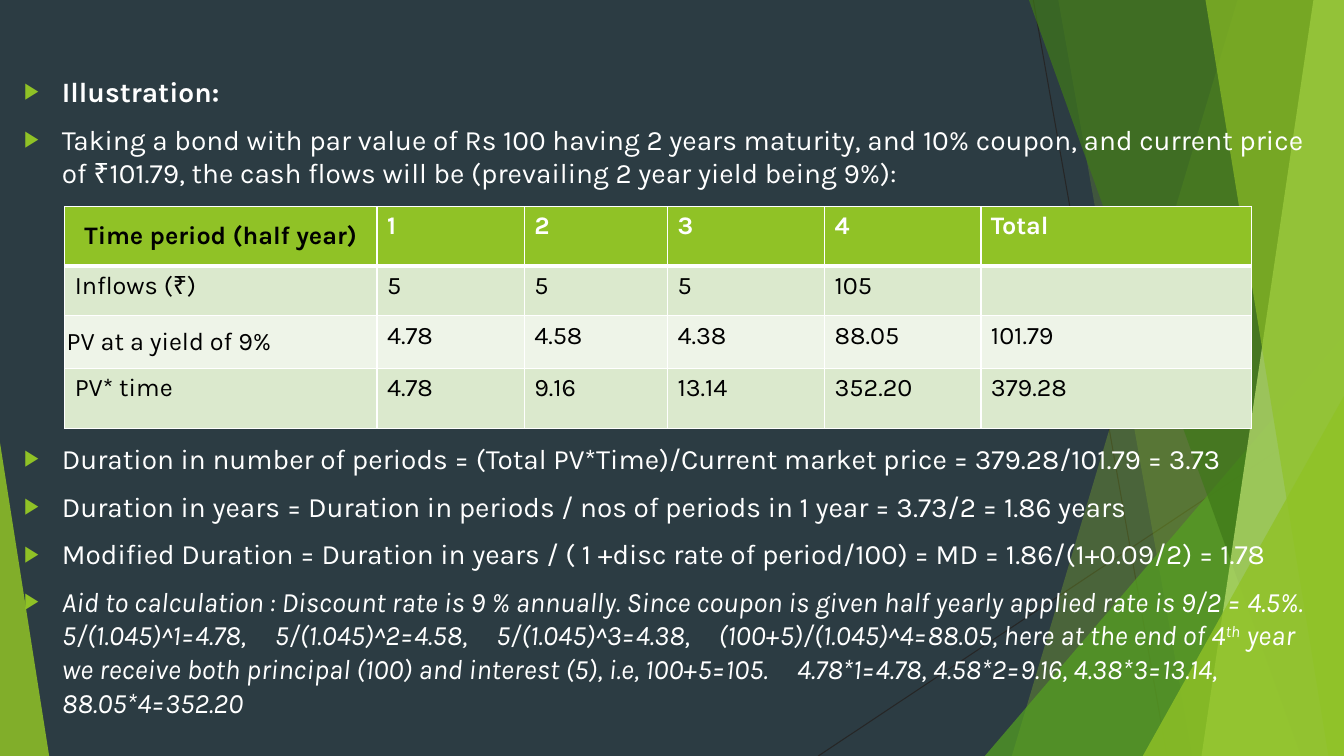
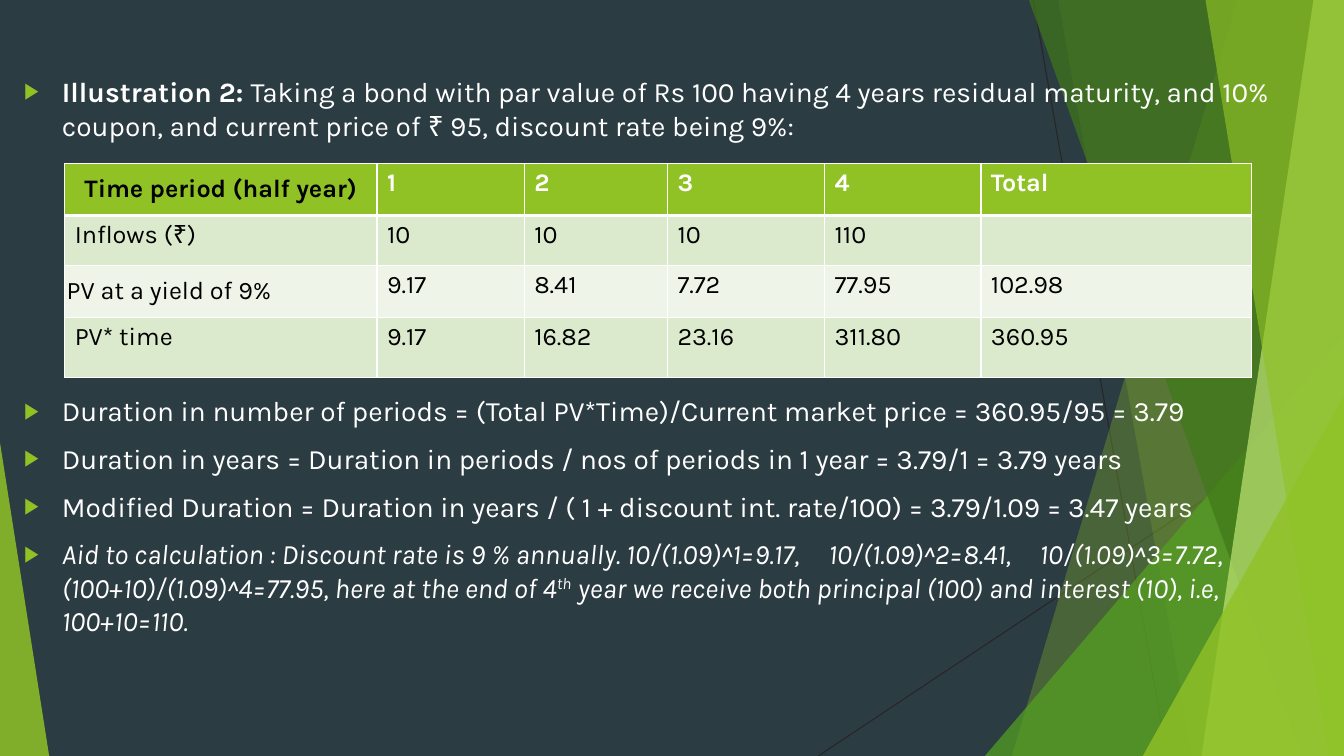
import pptx
import pptx.util
import pptx.dml.color
import pptx.enum.shapes
import pptx.enum.text
import pptx.oxml
import pptx.oxml.ns
import lxml.etree

Cm, Pt = pptx.util.Cm, pptx.util.Pt
RGB = pptx.dml.color.RGBColor
qn = pptx.oxml.ns.qn

# Shared look
WIDTH, HEIGHT = 33.87, 19.05
FONT = "Karla"
NIGHT = RGB(0x2C, 0x3C, 0x43)
LIME = RGB(0x90, 0xC2, 0x26)
LEAF = RGB(0x54, 0xA0, 0x21)
FOREST = RGB(0x3F, 0x78, 0x19)
PALE_LIME = RGB(0xC0, 0xE4, 0x74)
ROW_DARK = RGB(0xDB, 0xE9, 0xCD)
ROW_LIGHT = RGB(0xEE, 0xF4, 0xE8)
CHARCOAL = RGB(0x26, 0x26, 0x26)
WHITE = RGB(0xFF, 0xFF, 0xFF)
BLACK = RGB(0, 0, 0)

# Background: x1, y1, x2, y2 of the thin lines
RAYS = [(26.04, 0, 29.41, HEIGHT), (WIDTH, 10.24, 20.62, HEIGHT)]
# Bands reach the right edge: x at the top, x at the bottom, colour, opacity
# Wedges stand on the lower edge: left, top, width, apex, colour, opacity
FACETS = [
    ("band", (31.19, 25.5), LIME, 30),
    ("band", (26.67, 30.05), LIME, 20),
    ("wedge", (24.82, 8.46, 9.05, 1), LEAF, 72),
    ("band", (25.93, 32.79), FOREST, 70),
    ("band", (33.1, 30.28), PALE_LIME, 70),
    ("band", (30.38, 33.48), LIME, 65),
    ("wedge", (28.8, 9.98, 5.07, 1), LIME, 80),
    ("wedge", (0, 11.15, 1.24, 0), LIME, 85),
]

# Text runs: wording, font format, further run attributes
PLAIN, BOLD, ITALIC = {}, {"bold": True}, {"italic": True}
GAP = (" ", ITALIC, {"spc": "1600"})
TH = ("th", ITALIC, {"baseline": "30000"})


def plain(text):
    return [(text, PLAIN, {})]


def aid(*parts):
    """Italic runs; parts that are already runs pass through."""
    return [(part, ITALIC, {}) if isinstance(part, str) else part for part in parts]


PERIODS = ["Time period (half year)", "1", "2", "3", "4", "Total"]
COLUMNS = [7.87, 3.71, 3.61, 3.96, 3.94, 6.81]
TABLE_LEFT = 1.63
BODY_LEFT, BODY_TOP, BODY_WIDTH = 0.36, 1.75, 33.1

ILLUSTRATIONS = [
    {
        "intro": [
            [("Illustration:", BOLD, {})],
            plain("Taking a bond with par value of Rs 100 having 2 years maturity, and 10% coupon, "
                  "and current price of ₹101.79, the cash flows will be (prevailing 2 year yield being 9%):"),
        ],
        "table_top": 5.21,
        "rows": [1.5, 1.25, 1.32, 1.52],
        "cash_flows": [
            PERIODS,
            ["Inflows (₹)", "5", "5", "5", "105", ""],
            ["PV at a yield of 9%", "4.78", "4.58", "4.38", "88.05", "101.79"],
            ["PV* time", "4.78", "9.16", "13.14", "352.20", "379.28"],
        ],
        "workings_top": 11,
        "workings": [
            plain("Duration in number of periods = (Total PV*Time)/Current market price = 379.28/101.79 = 3.73"),
            plain("Duration in years = Duration in periods / nos of periods in 1 year = 3.73/2 = 1.86 years"),
            plain("Modified Duration = Duration in years / ( 1 +disc rate of period/100) = MD = "
                  "1.86/(1+0.09/2) = 1.78"),
            aid("Aid to calculation : Discount rate is 9 % annually. Since coupon is given half yearly "
                "applied rate is 9/2 = 4.5%.", GAP, "5/(1.045)^1=4.78,", GAP, "5/(1.045)^2=4.58,", GAP,
                "5/(1.045)^3=4.38,", GAP, "(100+5)/(1.045)^4=88.05, here at the end of 4", TH,
                " year we receive both principal (100) and interest (5), i.e, 100+5=105.", GAP,
                "4.78*1=4.78, 4.58*2=9.16, 4.38*3=13.14, 88.05*4=352.20"),
        ],
    },
    {
        "intro": [
            [("Illustration 2: ", BOLD, {})]
            + plain("Taking a bond with par value of Rs 100 having 4 years residual maturity, and 10% coupon, "
                    "and current price of ₹ 95, discount rate being 9%:"),
        ],
        "table_top": 4.11,
        "rows": [1.32, 1.25, 1.32, 1.52],
        "cash_flows": [
            PERIODS,
            ["Inflows (₹)", "10", "10", "10", "110", ""],
            ["PV at a yield of 9%", "9.17", "8.41", "7.72", "77.95", "102.98"],
            ["PV* time", "9.17", "16.82", "23.16", "311.80", "360.95"],
        ],
        "workings_top": 9.8,
        "workings": [
            plain("Duration in number of periods = (Total PV*Time)/Current market price = 360.95/95 = 3.79"),
            plain("Duration in years = Duration in periods / nos of periods in 1 year = 3.79/1 = 3.79 years"),
            plain("Modified Duration = Duration in years / ( 1 + discount int. rate/100) = 3.79/1.09 = 3.47 years"),
            aid("Aid to calculation : Discount rate is 9 % annually. 10/(1.09)^1=9.17,", GAP,
                "10/(1.09)^2=8.41,", GAP, "10/(1.09)^3=7.72,", GAP,
                "(100+10)/(1.09)^4=77.95, here at the end of 4", TH,
                " year we receive both principal (100) and interest (10), i.e, 100+10=110."),
        ],
    },
]


def apply(target, values):
    for name, value in values.items():
        setattr(target, name, value)


def add_child(parent, tag, **attributes):
    child = lxml.etree.SubElement(parent, qn(tag))
    for name, value in attributes.items():
        child.set(name, str(value))
    return child


def add_run(paragraph, text, size, colour, font_format, attributes):
    run = paragraph.add_run()
    run.text = text
    apply(run.font, {"name": FONT, "size": Pt(size), **font_format})
    run.font.color.rgb = colour
    for name, value in attributes.items():
        run.font._element.set(name, value)


# Background
def add_facets(slide):
    for x1, y1, x2, y2 in RAYS:
        ray = slide.shapes.add_connector(pptx.enum.shapes.MSO_CONNECTOR.STRAIGHT,
                                         Cm(x1), Cm(y1), Cm(x2), Cm(y2))
        ray.line.color.rgb = CHARCOAL
        ray.line.width = Pt(0.75)
        add_child(ray.element.spPr, "a:effectLst")
    for kind, place, colour, opacity in FACETS:
        if kind == "band":
            top_x, bottom_x = place
            outline = slide.shapes.build_freeform(Cm(top_x), 0)
            outline.add_line_segments([(Cm(WIDTH), 0), (Cm(WIDTH), Cm(HEIGHT)), (Cm(bottom_x), Cm(HEIGHT))])
            facet = outline.convert_to_shape()
        else:
            left, top, width, apex = place
            facet = slide.shapes.add_shape(pptx.enum.shapes.MSO_SHAPE.ISOSCELES_TRIANGLE,
                                           Cm(left), Cm(top), Cm(width), Cm(HEIGHT - top))
            facet.adjustments[0] = apex
        facet.shadow.inherit = False
        facet.line.fill.background()
        facet.fill.solid()
        facet.fill.fore_color.rgb = colour
        add_child(facet.element.spPr.find(".//" + qn("a:srgbClr")), "a:alpha", val=opacity * 1000)


# Bulleted text
def add_bullets(slide, top, height, paragraphs):
    frame = slide.shapes.add_textbox(Cm(BODY_LEFT), Cm(top), Cm(BODY_WIDTH), Cm(height)).text_frame
    frame.word_wrap = True
    for number, runs in enumerate(paragraphs):
        paragraph = frame.add_paragraph() if number else frame.paragraphs[0]
        if number:
            paragraph.space_before = Pt(10)
        properties = paragraph._p.get_or_add_pPr()
        properties.set("marL", str(Cm(0.95)))
        properties.set("indent", str(Cm(-0.95)))
        add_child(add_child(properties, "a:buClr"), "a:srgbClr", val=LIME)
        add_child(properties, "a:buSzPct", val=80000)
        add_child(properties, "a:buFont", typeface="Arial")
        add_child(properties, "a:buChar", char="▶")
        for text, font_format, attributes in runs:
            add_run(paragraph, text, 20, WHITE, font_format, attributes)


# Cash flow table
def add_borders(cell, widths):
    properties = cell._tc.get_or_add_tcPr()
    for position, (side, width) in enumerate(widths.items()):
        border = add_child(properties, "a:" + side, w=Pt(width))
        add_child(add_child(border, "a:solidFill"), "a:srgbClr", val=WHITE)
        properties.insert(position, border)


def add_cash_flows(slide, top, heights, cash_flows):
    table = slide.shapes.add_table(len(heights), len(COLUMNS), Cm(TABLE_LEFT), Cm(top),
                                   Cm(sum(COLUMNS)), Cm(sum(heights))).table
    apply(table, {"first_row": False, "horz_banding": False})
    for column, width in zip(table.columns, COLUMNS):
        column.width = Cm(width)
    for r, (height, values) in enumerate(zip(heights, cash_flows)):
        table.rows[r].height = Cm(height)
        header = r == 0
        for c, text in enumerate(values):
            cell = table.cell(r, c)
            cell.fill.solid()
            cell.fill.fore_color.rgb = LIME if header else ROW_DARK if r % 2 else ROW_LIGHT
            add_borders(cell, {"lnL": 1, "lnR": 1, "lnT": 3 if r == 1 else 1, "lnB": 3 if header else 1})
            paragraph = cell.text_frame.paragraphs[0]
            if c == 0 and r in (0, 2):
                apply(cell, {"vertical_anchor": pptx.enum.text.MSO_ANCHOR.MIDDLE,
                             "margin_left": Cm(0.05), "margin_right": Cm(0.05),
                             "margin_top": 0, "margin_bottom": 0})
                if header:
                    paragraph.alignment = pptx.enum.text.PP_ALIGN.CENTER
            if text:
                colour = WHITE if header and c else BLACK
                add_run(paragraph, text, 18, colour, {"bold": header}, {})


def main():
    deck = pptx.Presentation()
    apply(deck, {"slide_width": Cm(WIDTH), "slide_height": Cm(HEIGHT)})
    backdrop = deck.slide_master.background.fill
    backdrop.solid()
    backdrop.fore_color.rgb = NIGHT
    for illustration in ILLUSTRATIONS:
        slide = deck.slides.add_slide(deck.slide_layouts[6])
        table_top, workings_top = illustration["table_top"], illustration["workings_top"]
        add_facets(slide)
        add_bullets(slide, BODY_TOP, table_top - BODY_TOP, illustration["intro"])
        add_bullets(slide, workings_top, HEIGHT - 0.5 - workings_top, illustration["workings"])
        add_cash_flows(slide, table_top, illustration["rows"], illustration["cash_flows"])
    deck.save("out.pptx")


if __name__ == "__main__":
    main()
